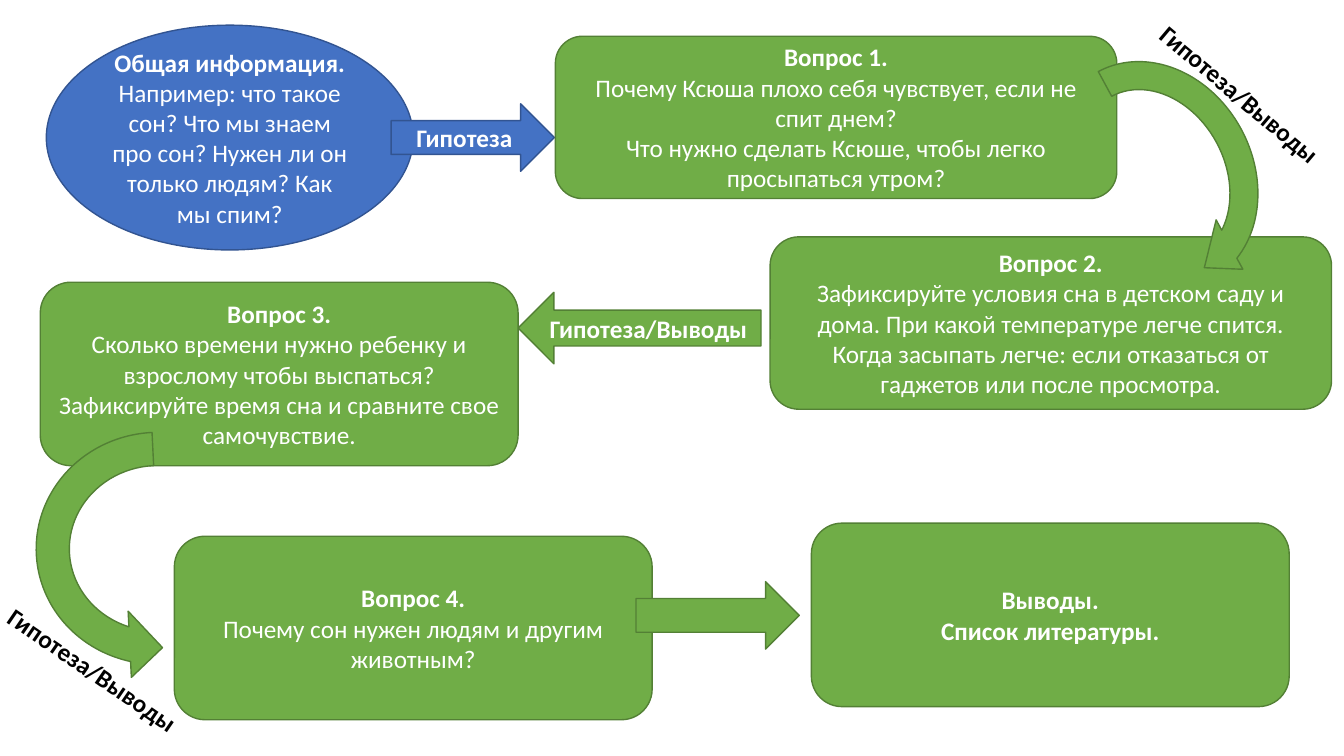
from pptx import Presentation
from pptx.dml.color import RGBColor
from pptx.enum.shapes import MSO_SHAPE
from pptx.enum.text import MSO_ANCHOR, MSO_AUTO_SIZE, PP_ALIGN
from pptx.util import Emu, Pt

PX = 9144
GREEN, DARK_GREEN = "70AD47", "538035"
BLUE, DARK_BLUE = "4472C4", "325491"
CARD = MSO_SHAPE.ROUNDED_RECTANGLE
RIGHT, LEFT = MSO_SHAPE.RIGHT_ARROW, MSO_SHAPE.LEFT_ARROW
CURVE = MSO_SHAPE.CIRCULAR_ARROW
LABEL = "Гипотеза/Выводы"


def color(value):
    return RGBColor.from_string(value)


def write(paragraph, text, bold=False, ink="FFFFFF", align=PP_ALIGN.CENTER):
    paragraph.alignment = align
    run = paragraph.add_run()
    run.text = text
    run.font.name = "Calibri"
    run.font.size = Pt(18)
    run.font.bold = bold
    run.font.color.rgb = color(ink)


presentation = Presentation()
presentation.slide_width = Emu(12192000)
presentation.slide_height = Emu(6858000)
slide = presentation.slides.add_slide(presentation.slide_layouts[6])

items = [
    (CARD, (764, 235, 557, 171), 0, GREEN, DARK_GREEN, [
        ("Вопрос 2.", True),
        ("Зафиксируйте условия сна в детском саду и дома. При какой температуре легче спится. "
         "Когда засыпать легче: если отказаться от гаджетов или после просмотра.", False)]),
    (MSO_SHAPE.OVAL, (46, 25, 364, 223), 0, BLUE, DARK_BLUE, [
        ("Общая информация.", True),
        ("Например: что такое сон? Что мы знаем про сон? Нужен ли он только людям? "
         "Как мы спим?", False)]),
    (RIGHT, (388, 103, 162, 67), 0, BLUE, DARK_BLUE, [("Гипотеза", True)]),
    (CARD, (551, 36, 557, 161), 0, GREEN, DARK_GREEN, [
        ("Вопрос 1.", True),
        ("Почему Ксюша плохо себя чувствует, если не спит днем?", False),
        ("Что нужно сделать Ксюше, чтобы легко просыпаться утром?", False)]),
    (CURVE, (1014, 63, 263, 223), 61.6, GREEN, DARK_GREEN, []),
    (LEFT, (514, 290, 241, 71), 0, GREEN, DARK_GREEN, [(LABEL, True)]),
    (CARD, (40, 280, 474, 182), 0, GREEN, DARK_GREEN, [
        ("Вопрос 3.", True),
        ("Сколько времени нужно ребенку и взрослому чтобы выспаться? "
         "Зафиксируйте время сна и сравните свое самочувствие.", False)]),
    (CURVE, (25, 407, 263, 274), 87.2, GREEN, DARK_GREEN, []),
    (CARD, (173, 532, 474, 182), 0, GREEN, DARK_GREEN, [
        ("Вопрос 4.", True),
        ("Почему сон нужен людям и другим животным?", False)]),
    (RIGHT, (631, 577, 162, 67), 0, GREEN, DARK_GREEN, []),
    (CARD, (805, 519, 474, 182), 0, GREEN, DARK_GREEN, [
        ("Выводы.", True), ("Список литературы.", True)]),
]

for kind, box, rotation, fill, outline, lines in items:
    shape = slide.shapes.add_shape(kind, *(Emu(length * PX) for length in box))
    shape.shadow.inherit = False
    shape.rotation = rotation
    shape.fill.solid()
    shape.fill.fore_color.rgb = color(fill)
    shape.line.color.rgb = color(outline)
    shape.line.width = Pt(1)
    frame = shape.text_frame
    frame.word_wrap = True
    frame.vertical_anchor = MSO_ANCHOR.MIDDLE
    for index, (text, bold) in enumerate(lines):
        paragraph = frame.add_paragraph() if index else frame.paragraphs[0]
        write(paragraph, text, bold=bold)
    if rotation == 87.2:
        shape.element.spPr.xfrm.set("flipV", "1")

for left, top, rotation in [(1122, 74, 40.2), (-16, 645, 34.5)]:
    label = slide.shapes.add_textbox(*(Emu(length * PX) for length in (left, top, 217, 40)))
    label.rotation = rotation
    label.text_frame.word_wrap = False
    label.text_frame.auto_size = MSO_AUTO_SIZE.SHAPE_TO_FIT_TEXT
    write(label.text_frame.paragraphs[0], LABEL, bold=True, ink="000000", align=PP_ALIGN.LEFT)

presentation.save("out.pptx")
